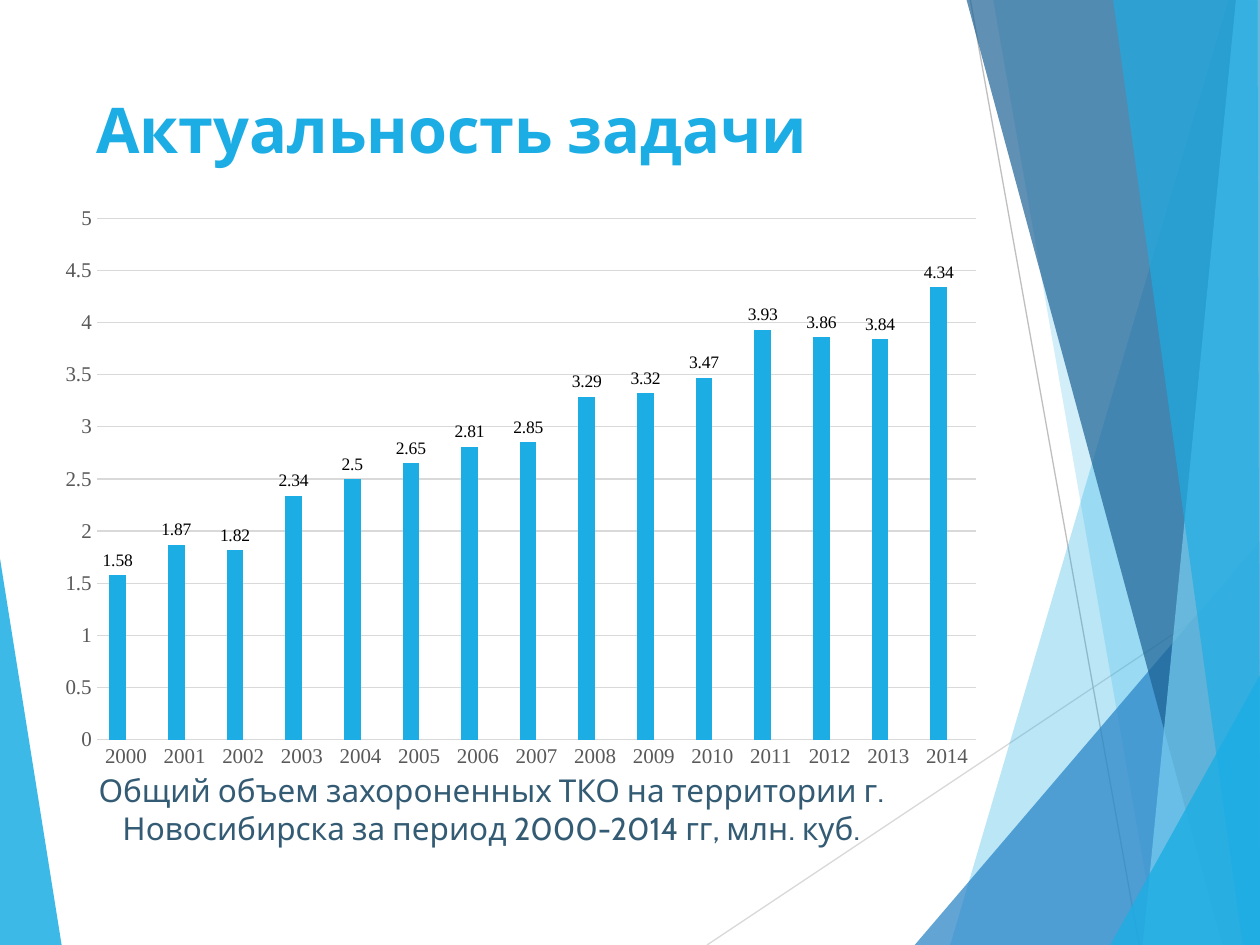
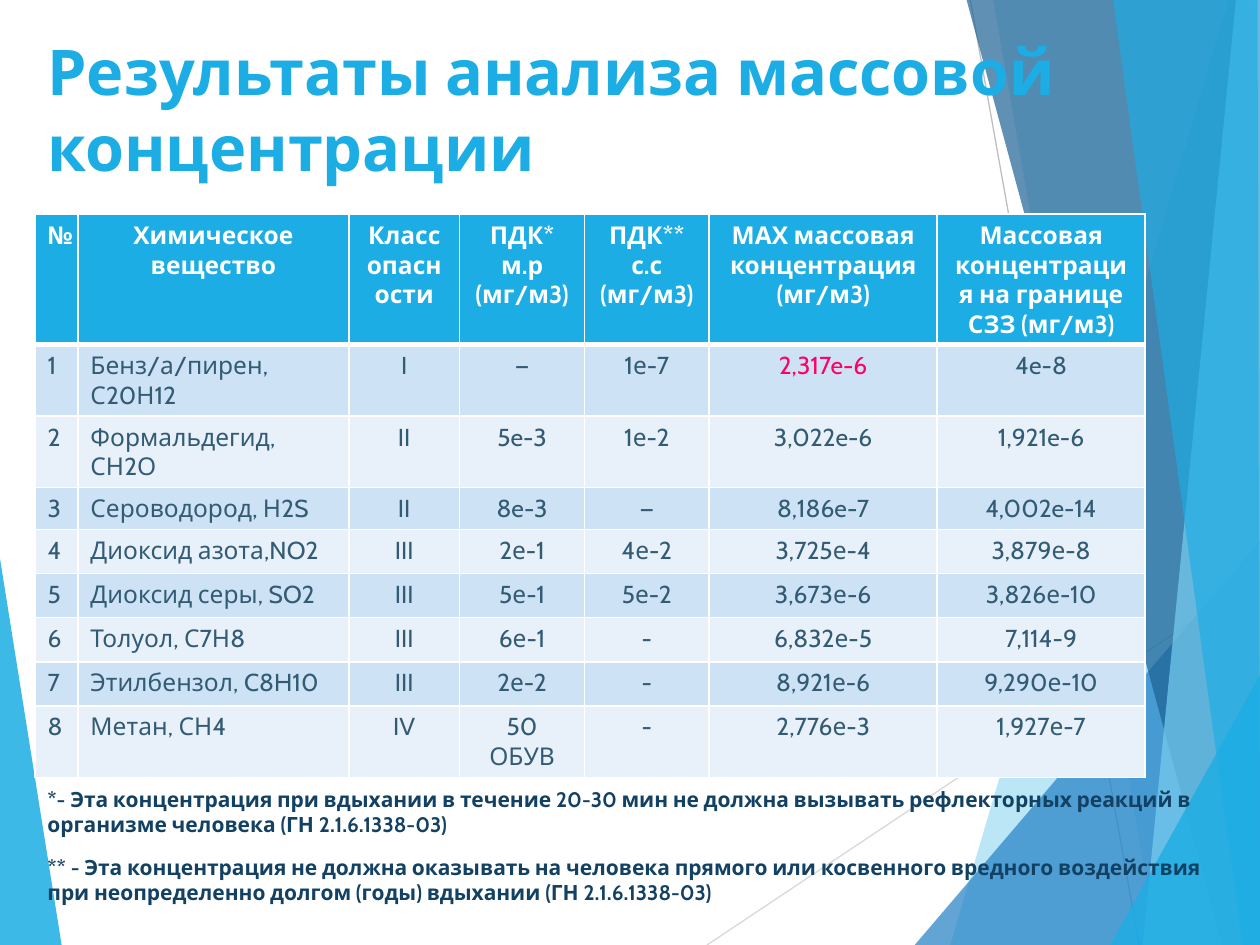
from lxml.etree import SubElement
from pptx import Presentation
from pptx.chart.data import CategoryChartData
from pptx.dml.color import RGBColor
from pptx.enum.chart import XL_CHART_TYPE, XL_LABEL_POSITION, XL_TICK_MARK
from pptx.enum.shapes import MSO_CONNECTOR
from pptx.enum.text import PP_ALIGN
from pptx.oxml.ns import qn
from pptx.util import Pt

FONT = "Cabin"
CHART_FONT = "Times New Roman"
WHITE = RGBColor(0xFF, 0xFF, 0xFF)
BLACK = RGBColor(0x00, 0x00, 0x00)
SKY = RGBColor(0x1C, 0xAD, 0xE4)
BLUE = RGBColor(0x26, 0x83, 0xC6)
NAVY = RGBColor(0x1D, 0x62, 0x94)
PALE_SKY = RGBColor(0x77, 0xCE, 0xEF)
TEAL = RGBColor(0x27, 0xCE, 0xD7)
SLATE = RGBColor(0x33, 0x5B, 0x74)
DARK_NAVY = RGBColor(0x13, 0x41, 0x63)
PINK = RGBColor(0xFF, 0x00, 0x66)
GRAY = RGBColor(0x59, 0x59, 0x59)
MID_GRAY = RGBColor(0xBF, 0xBF, 0xBF)
LIGHT_GRAY = RGBColor(0xD9, 0xD9, 0xD9)
BAND_DARK = RGBColor(0xCD, 0xE3, 0xF5)
BAND_LIGHT = RGBColor(0xE8, 0xF1, 0xFA)

WIDTH, HEIGHT = 720, 540
LEFT_FACET = ([(-0.5, 316), (35.3, 540.5), (-0.5, 540)], SKY, 85)
RIGHT_FACETS = [
    ([(702, 0), (543, 540), (721, 540.5), (720.5, 0.5)], SKY, 30),
    ([(567.5, -0.5), (661.5, 540), (720.5, 540), (720.5, -0.5)], SKY, 20),
    ([(522.7, 540), (720, 309), (720.5, 540)], BLUE, 72),
    ([(552.2, -0.5), (698.5, 540), (720.5, 540), (720.5, -0.5)], NAVY, 70),
    ([(706.3, -0.5), (653, 540), (720.5, 540), (720, -0.5)], PALE_SKY, 70),
    ([(636, -0.5), (710, 540), (720, 540), (718.6, -0.5)], SKY, 65),
    ([(634.5, 540), (720.5, 385), (720.5, 540)], SKY, 80),
]

VOLUMES = [1.58, 1.87, 1.82, 2.34, 2.5, 2.65, 2.81, 2.85,
           3.29, 3.32, 3.47, 3.93, 3.86, 3.84, 4.34]

COLUMN_WIDTHS = [24.5, 154.8, 63.4, 71.3, 71.3, 130.3, 118.8]
ROW_HEIGHTS = [71.3] + [23] * 3 + [25.2] * 5
SUBSTANCES = [
    ["№", "Химическое вещество", "Класс опасности", "ПДК* м.р\n(мг/м3)",
     "ПДК** с.с\n(мг/м3)", "МАХ массовая концентрация (мг/м3)",
     "Массовая концентрация на границе СЗЗ (мг/м3)"],
    ["1", "Бенз/а/пирен, С20Н12", "I", "—", "1е-7", "2,317e-6", "4e-8"],
    ["2", "Формальдегид, СН2О", "II", "5e-3", "1е-2", "3,022e-6", "1,921e-6"],
    ["3", "Сероводород, Н2S", "II", "8e-3", "—", "8,186e-7", "4,002e-14"],
    ["4", "Диоксид азота,NO2", "III", "2е-1", "4е-2", "3,725е-4", "3,879е-8"],
    ["5", "Диоксид серы, SO2", "III", "5е-1", "5е-2", "3,673е-6", "3,826е-10"],
    ["6", "Толуол, С7Н8", "III", "6е-1", "-", "6,832е-5", "7,114-9"],
    ["7", "Этилбензол, C8H10", "III", "2е-2", "-", "8,921е-6", "9,290е-10"],
    ["8", "Метан, СН4", "IV", "50 ОБУВ", "-", "2,776е-3", "1,927е-7"],
]
EXCEEDED = (1, 5)

FOOTNOTES = (
    "*- Эта концентрация при вдыхании в течение 20-30 мин не должна вызывать "
    "рефлекторных реакций в организме человека (ГН 2.1.6.1338-03)\n"
    "** - Эта концентрация не должна оказывать на человека прямого или косвенного "
    "вредного воздействия при неопределенно долгом (годы) вдыхании (ГН 2.1.6.1338-03)"
)


def set_font(font, name, size, color, bold=False):
    """Apply name, size, colour and weight to a font."""
    font.name = name
    font.size = Pt(size)
    font.bold = bold
    font.color.rgb = color


def write(tf, text, size, color, bold=False, align=PP_ALIGN.LEFT, before=0):
    """Fill a text frame and format each of its paragraphs."""
    tf.text = text
    for p in tf.paragraphs:
        p.alignment = align
        p.space_before = Pt(before)
        for r in p.runs:
            set_font(r.font, FONT, size, color, bold)


def add_text(s, box, text, size, color, **style):
    """Add a wrapping text box."""
    tf = s.shapes.add_textbox(*map(Pt, box)).text_frame
    tf.word_wrap = True
    write(tf, text, size, color, **style)


def add_title(s, box, text):
    """Add a slide title."""
    add_text(s, box, text, 36, SKY, bold=True)


def add_facet(s, points, color, opacity):
    """Add a translucent polygon."""
    start, *rest = [(Pt(x), Pt(y)) for x, y in points]
    builder = s.shapes.build_freeform(*start)
    builder.add_line_segments(rest)
    sp = builder.convert_to_shape()
    sp.shadow.inherit = False
    sp.line.fill.background()
    sp.fill.solid()
    sp.fill.fore_color.rgb = color
    clr = sp.fill._xPr.find(".//" + qn("a:srgbClr"))
    SubElement(clr, qn("a:alpha"), val=str(opacity * 1000))


def add_line(s, start, end, color):
    """Add a thin straight line."""
    line = s.shapes.add_connector(MSO_CONNECTOR.STRAIGHT, *map(Pt, start + end))
    line.line.color.rgb = color
    line.line.width = Pt(0.75)
    SubElement(line._element.spPr, qn("a:effectLst"))


def add_facet_slide(prs):
    """Add a blank slide with the shared faceted background."""
    s = prs.slides.add_slide(prs.slide_layouts[6])
    add_facet(s, *LEFT_FACET)
    add_line(s, (404, 540), (720.5, 329), LIGHT_GRAY)
    add_line(s, (554.5, 0), (651, 540), MID_GRAY)
    for facet in RIGHT_FACETS:
        add_facet(s, *facet)
    return s


def style_axis(axis):
    """Give a chart axis gray labels and no line or ticks."""
    set_font(axis.tick_labels.font, CHART_FONT, 12, GRAY)
    axis.major_tick_mark = XL_TICK_MARK.NONE
    axis.minor_tick_mark = XL_TICK_MARK.NONE
    axis.format.line.fill.background()


def add_volume_chart(s, box):
    """Add the column chart of yearly volumes."""
    data = CategoryChartData()
    data.categories = [str(2000 + i) for i in range(len(VOLUMES))]
    data.add_series("Series 1", VOLUMES)
    data.add_series("Series 2", [None] * len(VOLUMES))
    chart = s.shapes.add_chart(
        XL_CHART_TYPE.COLUMN_CLUSTERED, *map(Pt, box), data).chart
    chart.has_legend = False
    chart.has_title = False
    set_font(chart.font, FONT, 10, BLACK)

    plot = chart.plots[0]
    plot.vary_by_categories = False
    plot.gap_width = 150
    plot.overlap = 0
    for series, color in zip(plot.series, (SKY, TEAL)):
        series.format.fill.solid()
        series.format.fill.fore_color.rgb = color
    labels = plot.series[0].data_labels
    labels.show_value = True
    labels.position = XL_LABEL_POSITION.OUTSIDE_END
    set_font(labels.font, CHART_FONT, 10, BLACK)

    style_axis(chart.category_axis)
    axis = chart.value_axis
    style_axis(axis)
    axis.minimum_scale, axis.maximum_scale, axis.major_unit = 0, 5, 0.5
    axis.major_gridlines.format.line.color.rgb = LIGHT_GRAY
    axis.major_gridlines.format.line.width = Pt(0.75)


def add_borders(cell, top, bottom):
    """Draw white borders around a cell, with given top and bottom widths."""
    tc_pr = cell._tc.get_or_add_tcPr()
    for side, width in zip("LRTB", (1, 1, top, bottom)):
        ln = SubElement(tc_pr, qn("a:ln" + side), w=str(Pt(width)))
        fill = SubElement(ln, qn("a:solidFill"))
        SubElement(fill, qn("a:srgbClr"), val=str(WHITE))


def style_cell(cell, row, col):
    """Write one cell of the substance table."""
    header = row == 0
    add_borders(cell, 3 if row == 1 else 1, 3 if header else 1)
    cell.fill.solid()
    cell.fill.fore_color.rgb = SKY if header else (BAND_LIGHT, BAND_DARK)[row % 2]
    color = WHITE if header else PINK if (row, col) == EXCEEDED else SLATE
    align = PP_ALIGN.CENTER if header or col > 1 else PP_ALIGN.LEFT
    write(cell.text_frame, SUBSTANCES[row][col], 14, color, header, align)


def add_substance_table(s, left, top):
    """Add the table of substances and concentrations."""
    table = s.shapes.add_table(
        len(ROW_HEIGHTS), len(COLUMN_WIDTHS), Pt(left), Pt(top),
        Pt(sum(COLUMN_WIDTHS)), Pt(sum(ROW_HEIGHTS))).table
    for column, width in zip(table.columns, COLUMN_WIDTHS):
        column.width = Pt(width)
    for i, height in enumerate(ROW_HEIGHTS):
        table.rows[i].height = Pt(height)
        for j in range(len(COLUMN_WIDTHS)):
            style_cell(table.cell(i, j), i, j)


def main():
    """Build both slides and save them."""
    prs = Presentation()
    prs.slide_width, prs.slide_height = Pt(WIDTH), Pt(HEIGHT)

    s = add_facet_slide(prs)
    add_title(s, (48, 48, 500, 63), "Актуальность задачи")
    add_volume_chart(s, (26.6, 111.6, 542.2, 333.4))
    add_text(s, (11.5, 437, 538.6, 51),
             "Общий объем захороненных ТКО на территории г. Новосибирска "
             "за период 2000-2014 гг, млн. куб.",
             18, SLATE, align=PP_ALIGN.CENTER)

    s = add_facet_slide(prs)
    add_title(s, (20, 15, 623.5, 42.5), "Результаты анализа массовой концентрации")
    add_text(s, (20, 445.7, 686, 67.7), FOOTNOTES, 12, DARK_NAVY, bold=True, before=10)
    add_substance_table(s, 20, 122.4)

    prs.save("out.pptx")


if __name__ == "__main__":
    main()
